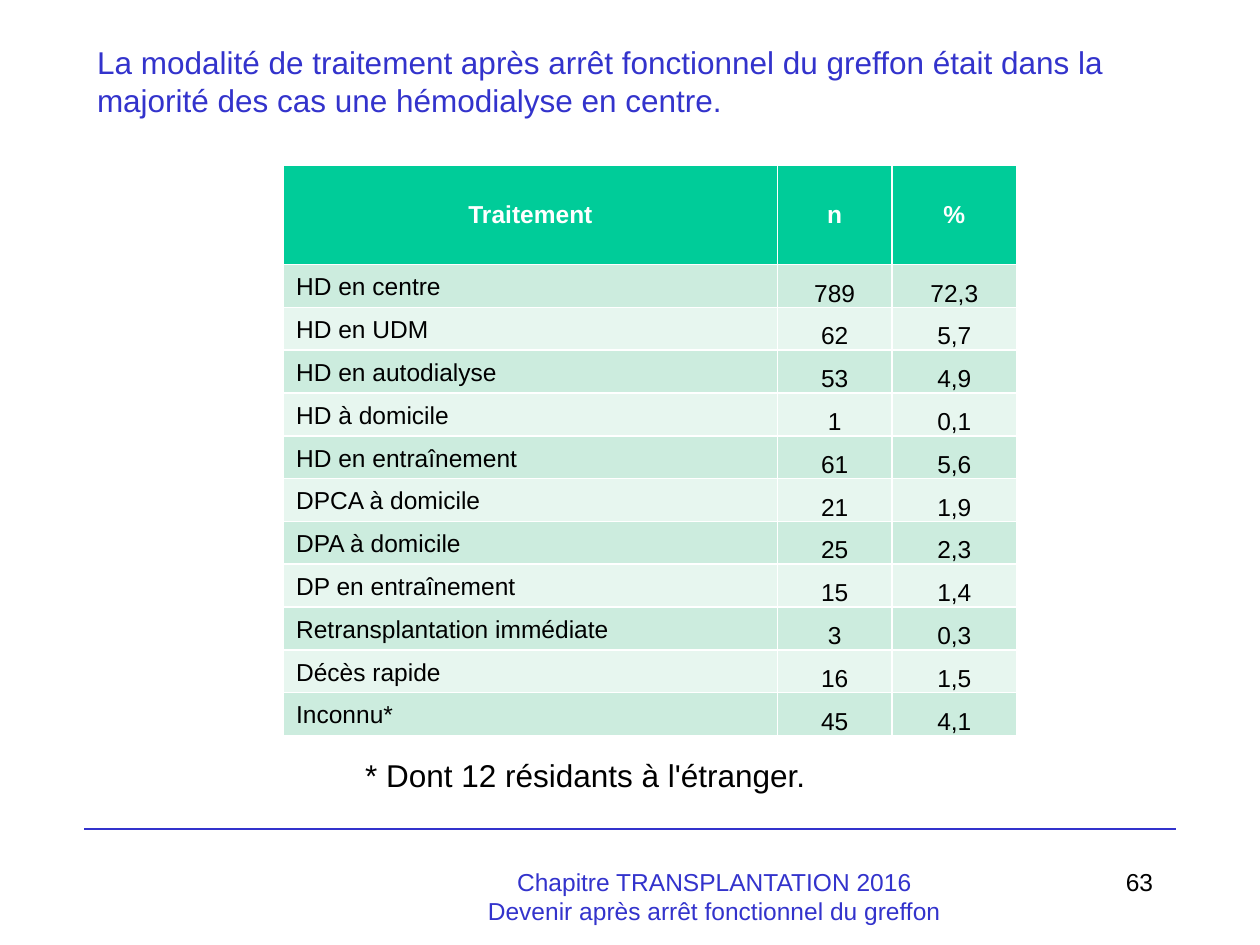
import pptx
import pptx.util
import pptx.dml.color
import pptx.enum.shapes
import pptx.enum.text
import lxml.etree

Inches = pptx.util.Inches
RGBColor = pptx.dml.color.RGBColor
ALIGN = pptx.enum.text.PP_ALIGN
ANCHOR = pptx.enum.text.MSO_ANCHOR
AUTO_SIZE = pptx.enum.text.MSO_AUTO_SIZE

BLUE = RGBColor(0x33, 0x33, 0xCC)
GREEN = RGBColor(0x00, 0xCC, 0x99)
DARK_BAND = RGBColor(0xCC, 0xEC, 0xDE)
LIGHT_BAND = RGBColor(0xE7, 0xF6, 0xEF)
BLACK = RGBColor(0, 0, 0)
WHITE = RGBColor(0xFF, 0xFF, 0xFF)


def write(frame, text, size, color, align=ALIGN.LEFT, bold=False):
    frame.text = text
    for paragraph in frame.paragraphs:
        paragraph.alignment = align
        paragraph.font.name = "Arial"
        paragraph.font.size = pptx.util.Pt(size)
        paragraph.font.bold = bold
        paragraph.font.color.rgb = color


def add_text(left, top, width, height, text, size, color, align=ALIGN.LEFT, wrap=True):
    box = slide.shapes.add_textbox(Inches(left), Inches(top), Inches(width), Inches(height))
    box.text_frame.word_wrap = wrap
    write(box.text_frame, text, size, color, align)
    return box.text_frame


prs = pptx.Presentation()
prs.slide_width = Inches(10)
prs.slide_height = Inches(7.5)
slide = prs.slides.add_slide(prs.slide_layouts[5])

title = slide.shapes.title
title.left, title.top = Inches(0.67), Inches(0.29)
title.width, title.height = Inches(8.98), Inches(0.71)
title.text_frame.vertical_anchor = ANCHOR.TOP
title.text_frame.auto_size = AUTO_SIZE.SHAPE_TO_FIT_TEXT
write(title.text_frame,
      "La modalité de traitement après arrêt fonctionnel du greffon était dans la "
      "majorité des cas une hémodialyse en centre.", 18, BLUE)

footer_rule = slide.shapes.add_connector(
    pptx.enum.shapes.MSO_CONNECTOR.STRAIGHT,
    Inches(0.67), Inches(6.58), Inches(9.33), Inches(6.58))
footer_rule.line.color.rgb = BLUE
footer_rule.line.width = pptx.util.Pt(1)
lxml.etree.SubElement(footer_rule.element.spPr, pptx.oxml.ns.qn("a:effectLst"))

treatments = [
    ("Traitement", "n", "%"),
    ("HD en centre", "789", "72,3"),
    ("HD en UDM", "62", "5,7"),
    ("HD en autodialyse", "53", "4,9"),
    ("HD à domicile", "1", "0,1"),
    ("HD en entraînement", "61", "5,6"),
    ("DPCA à domicile", "21", "1,9"),
    ("DPA à domicile", "25", "2,3"),
    ("DP en entraînement", "15", "1,4"),
    ("Retransplantation immédiate", "3", "0,3"),
    ("Décès rapide", "16", "1,5"),
    ("Inconnu*", "45", "4,1"),
]
treatment_table = slide.shapes.add_table(
    len(treatments), 3, Inches(2.25), Inches(1.31), Inches(5.82), Inches(4.54)).table
for column, width in zip(treatment_table.columns, (3.92, 0.91, 0.99)):
    column.width = Inches(width)

for r, values in enumerate(treatments):
    header = r == 0
    treatment_table.rows[r].height = Inches(0.79 if header else 0.34)
    for c, value in enumerate(values):
        cell = treatment_table.cell(r, c)
        cell.fill.solid()
        cell.fill.fore_color.rgb = GREEN if header else DARK_BAND if r % 2 else LIGHT_BAND
        cell.vertical_anchor = ANCHOR.MIDDLE if header else ANCHOR.BOTTOM
        write(cell.text_frame, value, 14, WHITE if header else BLACK,
              ALIGN.CENTER if header or c else ALIGN.LEFT, bold=header)
        if c and not header:
            cell.margin_left = cell.margin_right = Inches(0.05)
            cell.margin_top = cell.margin_bottom = 0
            cell.text_frame.paragraphs[0].line_spacing = 1.15

footnote = add_text(2.8, 5.95, 3.73, 0.4, "* Dont 12 résidants à l'étranger.", 18, BLACK, wrap=False)
footnote.vertical_anchor = ANCHOR.BOTTOM
footnote.auto_size = AUTO_SIZE.SHAPE_TO_FIT_TEXT

add_text(3.42, 6.83, 4.5, 0.5,
         "Chapitre TRANSPLANTATION 2016\nDevenir après arrêt fonctionnel du greffon",
         14, BLUE, ALIGN.CENTER)
add_text(7.17, 6.83, 2.08, 0.5, "63", 14, BLACK, ALIGN.RIGHT)

prs.save("out.pptx")
